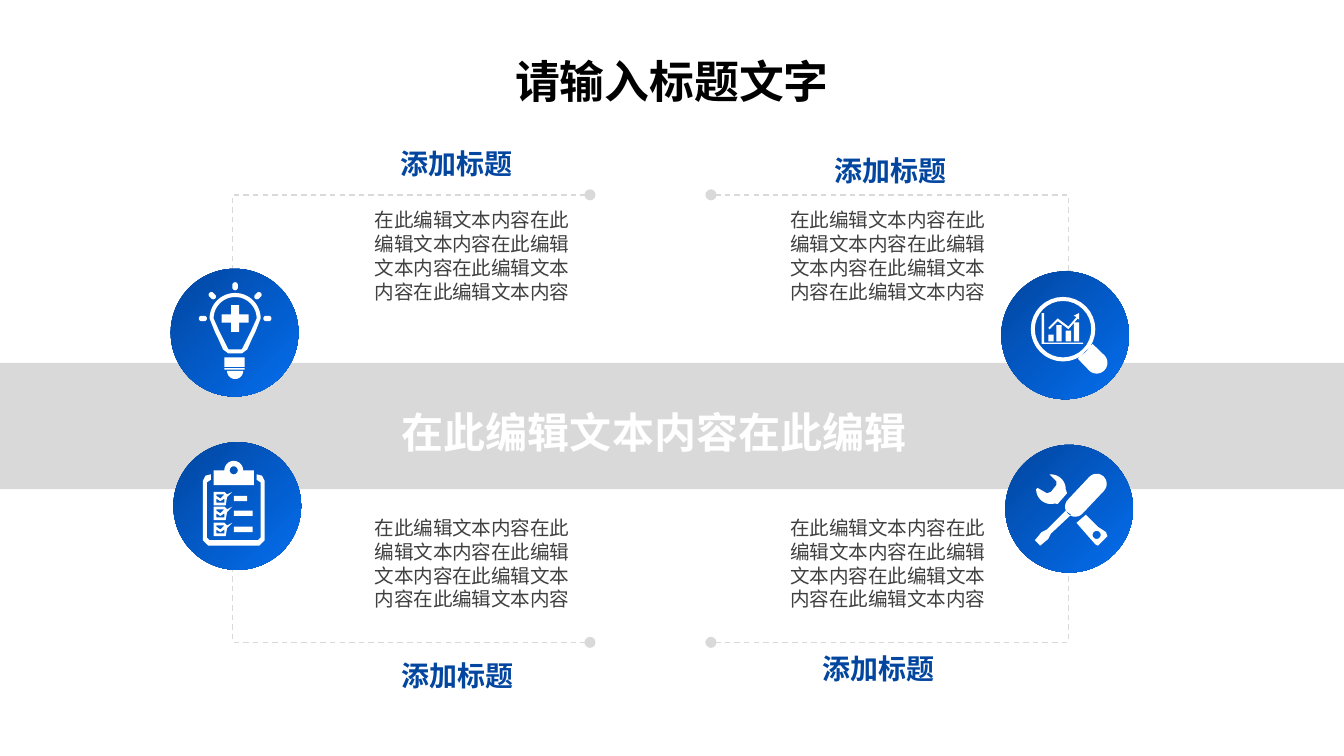
from math import cos, hypot, radians, sin

from lxml.etree import SubElement
from pptx import Presentation
from pptx.dml.color import RGBColor
from pptx.enum.dml import MSO_LINE
from pptx.enum.shapes import MSO_SHAPE
from pptx.enum.text import MSO_AUTO_SIZE, PP_ALIGN
from pptx.oxml.ns import qn
from pptx.util import Inches, Pt

COLORS = {"grey": "D9D9D9", "white": "FFFFFF", "black": "000000",
          "body": "404040", "blue_dark": "0246A0", "blue_light": "046EEE"}
FONT = "Noto Sans CJK SC"
DISC = 0.95
BODY = "在此编辑文本内容" * 5


def color(name):
    return RGBColor.from_string(COLORS[name])


def paint(fill, name):
    if name == "blue":
        fill.gradient()
        fill.gradient_angle = 315
        for stop, shade in zip(fill.gradient_stops, ("blue_dark", "blue_light")):
            stop.color.rgb = color(shade)
    else:
        fill.solid()
        fill.fore_color.rgb = color(name)


def add_shape(shapes, kind, box, fill):
    shape = shapes.add_shape(kind, *map(Inches, box))
    shape.shadow.inherit = False
    paint(shape.fill, fill)
    shape.line.fill.background()
    return shape


def add_text(page, box, text, size, fill, bold=False, align=PP_ALIGN.LEFT, wrap=True):
    frame = page.shapes.add_textbox(*map(Inches, box)).text_frame
    frame.word_wrap = wrap
    frame.auto_size = MSO_AUTO_SIZE.SHAPE_TO_FIT_TEXT
    para = frame.paragraphs[0]
    para.alignment = align
    para.line_spacing = Pt(size * 1.21)
    span = para.add_run()
    span.text = text
    span.font.size = Pt(size)
    span.font.bold = bold
    span.font.name = FONT
    paint(span.font.fill, fill)
    SubElement(span._r.get_or_add_rPr(), qn("a:ea"), typeface=FONT)


def add_outline(shapes, left, top, contours, close=True):
    """Draw contours, in inches from left and top, as one freeform."""
    placed = [[(Inches(left + x), Inches(top + y)) for x, y in contour]
              for contour in contours]
    builder = shapes.build_freeform(*placed[0][0], scale=1.0)
    for index, contour in enumerate(placed):
        if index:
            builder.move_to(*contour[0])
        builder.add_line_segments(contour[1:], close=close)
    outline = builder.convert_to_shape()
    outline.shadow.inherit = False
    return outline


def arc(x, y, radius, start=0, end=360, steps=32):
    angles = [radians(start + (end - start) * i / steps) for i in range(steps + 1)]
    return [(x + radius * cos(a), y + radius * sin(a)) for a in angles]


def rect(x, y, width, height):
    return [(x, y), (x + width, y), (x + width, y + height), (x, y + height)]


def capsule(x1, y1, x2, y2, width):
    """Bar with round ends between two points."""
    length = hypot(x2 - x1, y2 - y1)
    dx, dy = (x2 - x1) / length, (y2 - y1) / length
    turns = [(cos(radians(a)), sin(radians(a))) for a in range(-90, 91, 15)]
    return [(x + sign * width / 2 * (c * dx - s * dy),
             y + sign * width / 2 * (c * dy + s * dx))
            for x, y, sign in ((x2, y2, 1), (x1, y1, -1)) for c, s in turns]


def bulb():
    x, y = 0.48, 0.37
    outer = arc(x, y, 0.19, 180, 360) + [
        (0.63, 0.47), (0.61, 0.51), (0.57, 0.60), (0.53, 0.63),
        (0.43, 0.63), (0.39, 0.60), (0.35, 0.51), (0.33, 0.47)]
    inner = arc(x, y, 0.16, 180, 360) + [
        (0.60, 0.46), (0.58, 0.50), (0.53, 0.60),
        (0.43, 0.60), (0.38, 0.50), (0.36, 0.46)]
    plus = [(x + a, y + b) for a, b in (
        (-0.03, -0.1), (0.03, -0.1), (0.03, -0.03), (0.1, -0.03),
        (0.1, 0.03), (0.03, 0.03), (0.03, 0.1), (-0.03, 0.1),
        (-0.03, 0.03), (-0.1, 0.03), (-0.1, -0.03), (-0.03, -0.03))]
    rays = []
    for angle in range(180, 361, 45):
        c, s = cos(radians(angle)), sin(radians(angle))
        rays.append(capsule(x + 0.23 * c, y + 0.23 * s, x + 0.25 * c, y + 0.25 * s, 0.04))
    base = [rect(0.4, 0.66, 0.15, 0.07), rect(0.4, 0.74, 0.15, 0.01),
            arc(x, 0.76, 0.06, 0, 180)]
    return [outer, inner, plus, *rays, *base]


def clipboard():
    frame = [(0.28, 0.24), (0.24, 0.25), (0.22, 0.29), (0.22, 0.73), (0.26, 0.77),
             (0.64, 0.77), (0.68, 0.73), (0.68, 0.29), (0.66, 0.25), (0.62, 0.24),
             (0.62, 0.28), (0.65, 0.30), (0.65, 0.71), (0.63, 0.73),
             (0.27, 0.73), (0.25, 0.71), (0.25, 0.30), (0.28, 0.28)]
    clip = [(0.3, 0.32), (0.3, 0.21), *arc(0.45, 0.21, 0.07, 180, 360),
            (0.6, 0.21), (0.6, 0.32)]
    contours = [frame, clip, arc(0.45, 0.21, 0.03)]
    tick_box = [
        [(0.3, 0), (0.38, 0), (0.4, 0.02), (0.44, 0), (0.4, 0.04), (0.39, 0.1), (0.3, 0.1)],
        [(0.32, 0.02), (0.38, 0.02), (0.35, 0.05), (0.32, 0.03)],
        [(0.32, 0.05), (0.35, 0.07), (0.38, 0.05), (0.38, 0.08), (0.32, 0.08)]]
    for y, width in ((0.37, 0.1), (0.48, 0.14), (0.6, 0.14)):
        contours += [[(px, y + py) for px, py in part] for part in tick_box]
        contours.append(rect(0.45, y + 0.03, width, 0.04))
    return contours


def magnifier():
    lens = [arc(0.46, 0.43, 0.24), arc(0.46, 0.43, 0.21)]
    handle = [(0.68, 0.54), *arc(0.71, 0.68, 0.08, -45, 135), (0.57, 0.65)]
    axes = [(0.3, 0.31), (0.32, 0.31), (0.32, 0.53), (0.61, 0.53), (0.61, 0.54), (0.3, 0.54)]
    trend = [(0.35, 0.42), (0.42, 0.35), (0.5, 0.41), (0.56, 0.34), (0.54, 0.33),
             (0.58, 0.31), (0.58, 0.36), (0.57, 0.35), (0.5, 0.43), (0.42, 0.37), (0.36, 0.43)]
    bars = [rect(x, top, 0.04, 0.52 - top) for x, top in
            ((0.35, 0.47), (0.41, 0.4), (0.48, 0.44), (0.54, 0.38))]
    return [*lens, handle, axes, trend, *bars]


def tools():
    driver = [capsule(0.52, 0.46, 0.68, 0.29, 0.15),
              [(0.45, 0.49), (0.31, 0.63), (0.27, 0.65), (0.22, 0.71),
               (0.26, 0.75), (0.32, 0.7), (0.34, 0.66), (0.49, 0.52)]]
    wrench = [[(0.33, 0.22), (0.38, 0.27), (0.38, 0.3), (0.34, 0.35), (0.31, 0.36),
               (0.24, 0.32), *arc(0.34, 0.33, 0.11, 180, 75), (0.39, 0.44),
               (0.46, 0.36), *arc(0.34, 0.33, 0.11, 0, -90)],
              [(0.53, 0.58), (0.67, 0.74), (0.69, 0.75), (0.76, 0.68),
               (0.75, 0.65), (0.69, 0.61), (0.6, 0.52)],
              arc(0.68, 0.67, 0.03)]
    return driver + wrench


def add_lead(page, left, top, points):
    """Dashed elbow line with a dot at each end."""
    lead = add_outline(page.shapes, left, top, [points], close=False)
    lead.fill.background()
    lead.line.color.rgb = color("grey")
    lead.line.width = 0
    lead.line.dash_style = MSO_LINE.DASH
    stroke = lead._element.spPr.find(qn("a:ln"))
    for end in ("a:headEnd", "a:tailEnd"):
        SubElement(stroke, qn(end), type="oval")


def add_badge(page, left, top, contours):
    group = page.shapes.add_group_shape()
    add_shape(group.shapes, MSO_SHAPE.OVAL, (left, top, DISC, DISC), "blue")
    icon = add_outline(group.shapes, left, top, contours)
    paint(icon.fill, "white")
    icon.line.fill.background()


def main():
    deck = Presentation()
    deck.slide_width = Inches(10)
    deck.slide_height = Inches(10 * 9 / 16)
    page = deck.slides.add_slide(deck.slide_layouts[6])

    for top, corner, side in ((1.45, 0, 0.6), (4.18, 0.6, 0)):
        for left, disc_x, dot_x in ((1.73, 0, 2.66), (5.29, 2.66, 0)):
            add_lead(page, left, top, [(disc_x, side), (disc_x, corner), (dot_x, corner)])

    add_shape(page.shapes, MSO_SHAPE.RECTANGLE, (0, 2.7, 10, 0.94), "grey")
    add_text(page, (2.89, 2.97, 3.96, 0.48), "在此编辑文本内容在此编辑", 22.5,
             "white", bold=True, wrap=False)

    for left, top, icon in ((1.27, 2, bulb), (1.29, 3.29, clipboard),
                            (7.45, 2.02, magnifier), (7.48, 3.31, tools)):
        add_badge(page, left, top, icon())

    left_side, right_side = (2.69, PP_ALIGN.LEFT), (5.76, PP_ALIGN.RIGHT)
    for heading, (body_left, align), body_top in (
            ((2.88, 1.04, 1.19, 0.35), left_side, 1.5),
            ((5.95, 1.09, 1.19, 0.35), right_side, 1.5),
            ((2.89, 4.85, 1.12, 0.35), left_side, 3.79),
            ((5.95, 4.8, 1.1, 0.35), right_side, 3.79)):
        add_text(page, heading, "添加标题", 15, "blue", bold=True, align=align)
        add_text(page, (body_left, body_top, 1.67, 0.81), BODY, 10.5, "body", align=align)

    add_text(page, (3.73, 0.35, 2.54, 0.5), "请输入标题文字", 24, "black",
             bold=True, align=PP_ALIGN.CENTER, wrap=False)
    deck.save("out.pptx")


if __name__ == "__main__":
    main()
